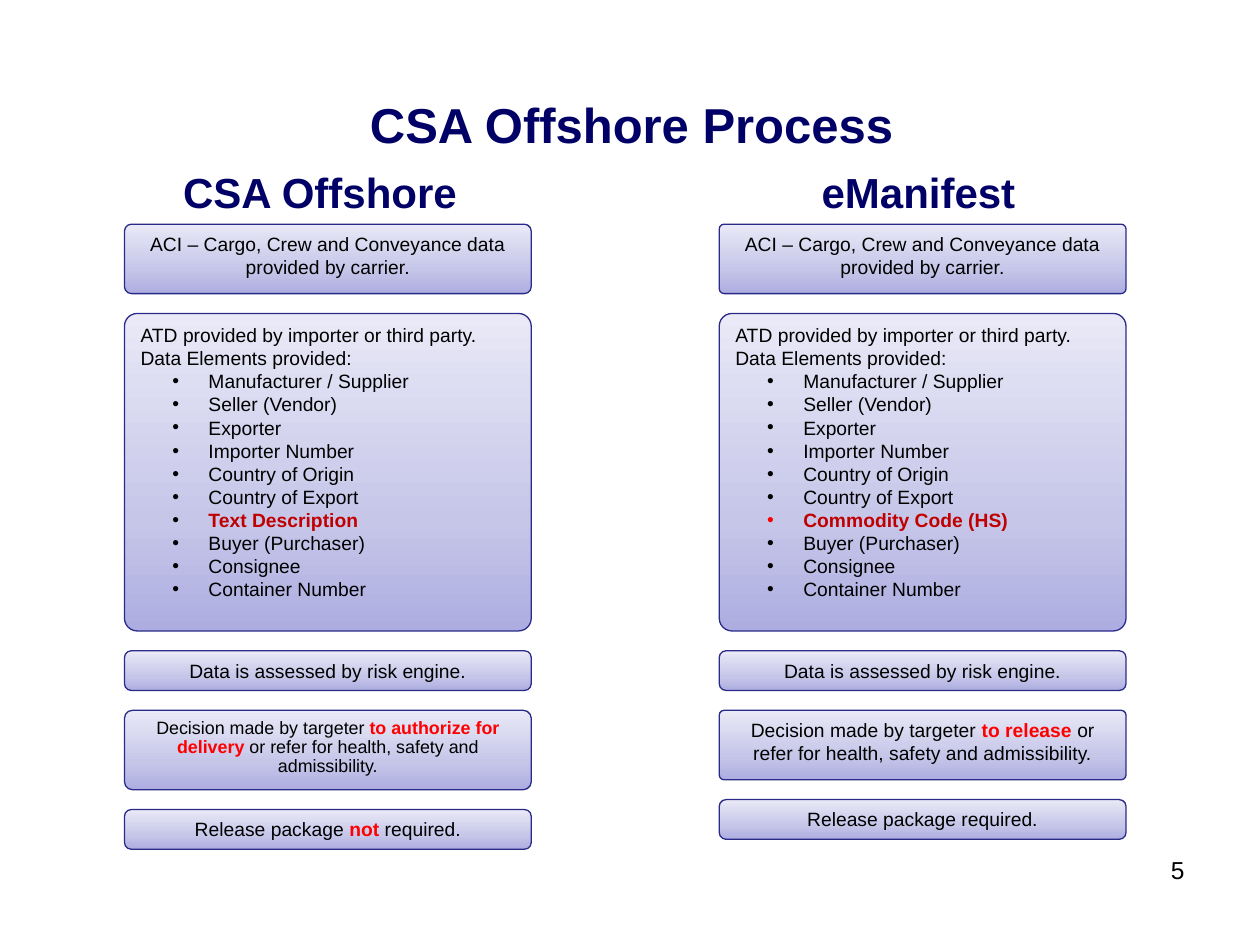
import copy

import pptx
import pptx.dml.color
import pptx.enum.shapes
import pptx.enum.text
import pptx.oxml.ns
import pptx.util
from lxml import etree
from pptx.util import Cm

BLACK, NAVY, RED, DARK_RED = "000000", "000066", "FF0000", "C00000"
CENTER = pptx.enum.text.PP_ALIGN.CENTER
LEFT = pptx.enum.text.PP_ALIGN.LEFT
RIGHT = pptx.enum.text.PP_ALIGN.RIGHT
TOP = pptx.enum.text.MSO_ANCHOR.TOP
MIDDLE = pptx.enum.text.MSO_ANCHOR.MIDDLE
BOTTOM = pptx.enum.text.MSO_ANCHOR.BOTTOM
GRADIENT = [(0, "ADADE1"), (0.35, "C6C6E9"), (1, "E9E9F7")]
BOX_WIDTH, FIRST_TOP, GAP = 8.2, 4.52, 0.4

CARRIER = [("ACI – Cargo, Crew and Conveyance data provided by carrier.", BLACK)]
ASSESSED = [("Data is assessed by risk engine.", BLACK)]
TARGETER = ("Decision made by targeter ", BLACK)
INTRODUCTION = ["ATD provided by importer or third party.", "Data Elements provided:"]
ELEMENTS_BEFORE = ["Manufacturer / Supplier", "Seller (Vendor)", "Exporter",
                   "Importer Number", "Country of Origin", "Country of Export"]
ELEMENTS_AFTER = ["Buyer (Purchaser)", "Consignee", "Container Number"]


def color(value):
    """Turn a hex string into a colour."""
    return pptx.dml.color.RGBColor.from_string(value)


def add_run(paragraph, text, value, size, bold):
    """Add one formatted run to a paragraph."""
    run = paragraph.add_run()
    run.text = text
    run.font.name = "Arial"
    run.font.size = pptx.util.Pt(size)
    run.font.bold = bold
    run.font.color.rgb = color(value)


def add_runs(paragraph, runs, size=11):
    """Add (text, colour) runs, with every coloured run bold."""
    for text, value in runs:
        add_run(paragraph, text, value, size, value != BLACK)


def add_bullet(paragraph, value):
    """Give a paragraph a hanging bullet of the given colour."""
    qn = pptx.oxml.ns.qn
    properties = paragraph._p.get_or_add_pPr()
    properties.set("marL", str(Cm(1.37)))
    properties.set("indent", str(-Cm(0.73)))
    bullet_color = etree.SubElement(properties, qn("a:buClr"))
    etree.SubElement(bullet_color, qn("a:srgbClr"), val=value)
    etree.SubElement(properties, qn("a:buFont"), typeface="Arial")
    etree.SubElement(properties, qn("a:buChar"), char="•")


def add_label(slide, text, position, size, value=NAVY, bold=True,
              alignment=CENTER, anchor=BOTTOM):
    """Add a one-line text box and return its text frame."""
    shape = slide.shapes.add_textbox(*[Cm(length) for length in position])
    frame = shape.text_frame
    frame.word_wrap = True
    frame.vertical_anchor = anchor
    frame.paragraphs[0].alignment = alignment
    add_run(frame.paragraphs[0], text, value, size, bold)
    return frame


def fill_gradient(shape):
    """Fill a shape with the vertical lavender gradient."""
    shape.fill.gradient()
    shape.fill.gradient_angle = 90
    stops = shape._element.spPr.find(".//" + pptx.oxml.ns.qn("a:gsLst"))
    stops.append(copy.deepcopy(stops[-1]))
    for stop, (position, value) in zip(shape.fill.gradient_stops, GRADIENT):
        stop.position = position
        stop.color.rgb = color(value)


def add_box(slide, left, top, height, corner):
    """Add an empty rounded box and return its text frame."""
    shape = slide.shapes.add_shape(
        pptx.enum.shapes.MSO_SHAPE.ROUNDED_RECTANGLE,
        Cm(left), Cm(top), Cm(BOX_WIDTH), Cm(height))
    shape.adjustments[0] = corner
    shape.shadow.inherit = False
    fill_gradient(shape)
    shape.line.color.rgb = color("2A2A89")
    shape.line.width = pptx.util.Pt(0.75)
    shape.text_frame.word_wrap = True
    shape.text_frame.vertical_anchor = TOP
    return shape.text_frame


def write_sentence(frame, runs, size=11, spacing=None):
    """Write one centred paragraph into a box."""
    paragraph = frame.paragraphs[0]
    paragraph.alignment = CENTER
    paragraph.line_spacing = spacing
    add_runs(paragraph, runs, size)


def write_data_elements(frame, special, bullet_value):
    """Write the introduction and the bulleted data elements into a box."""
    for index, text in enumerate(INTRODUCTION):
        paragraph = frame.add_paragraph() if index else frame.paragraphs[0]
        paragraph.alignment = LEFT
        add_runs(paragraph, [(text, BLACK)])
    for text in ELEMENTS_BEFORE + [special] + ELEMENTS_AFTER:
        paragraph = frame.add_paragraph()
        paragraph.level = 1
        paragraph.alignment = LEFT
        add_bullet(paragraph, bullet_value if text == special else BLACK)
        add_runs(paragraph, [(text, DARK_RED if text == special else BLACK)])


def add_column(slide, left, boxes):
    """Stack boxes of (height, corner, writer, arguments) with equal gaps."""
    top = FIRST_TOP
    for height, corner, write, arguments in boxes:
        write(add_box(slide, left, top, height, corner), *arguments)
        top += height + GAP


def main():
    """Build the slide and save it."""
    presentation = pptx.Presentation()
    presentation.slide_width, presentation.slide_height = Cm(25.4), Cm(19.05)
    slide = presentation.slides.add_slide(presentation.slide_layouts[6])

    add_label(slide, "CSA Offshore Process", (1.3, 1.32, 22.86, 2.36), 28, anchor=MIDDLE)
    heading = add_label(slide, "CSA Offshore", (1.9, 2.72, 11.23, 1.78), 24)
    heading.margin_right = Cm(2.38)
    add_label(slide, "eManifest", (12.9, 2.72, 11.23, 1.78), 24)
    add_label(slide, "5", (18.21, 17.12, 5.92, 1.32), 14, BLACK, False, RIGHT, TOP)

    authorize = [TARGETER, ("to authorize for delivery ", RED),
                 ("or refer for health, safety and admissibility.", BLACK)]
    release = [TARGETER, ("to release ", RED),
               ("or refer for health, safety and admissibility.", BLACK)]
    not_required = [("Release package ", BLACK), ("not", RED), (" required.", BLACK)]

    add_column(slide, 2.51, [
        (1.4, 0.1, write_sentence, (CARRIER,)),
        (6.4, 0.04, write_data_elements, ("Text Description", BLACK)),
        (0.8, 0.17, write_sentence, (ASSESSED,)),
        (1.6, 0.1, write_sentence, (authorize, 10.2, 0.9)),
        (0.8, 0.17, write_sentence, (not_required,)),
    ])
    add_column(slide, 14.5, [
        (1.4, 0.07, write_sentence, (CARRIER,)),
        (6.4, 0.04, write_data_elements, ("Commodity Code (HS)", RED)),
        (0.8, 0.17, write_sentence, (ASSESSED,)),
        (1.4, 0.07, write_sentence, (release,)),
        (0.8, 0.17, write_sentence, ([("Release package required.", BLACK)],)),
    ])
    presentation.save("out.pptx")


if __name__ == "__main__":
    main()
